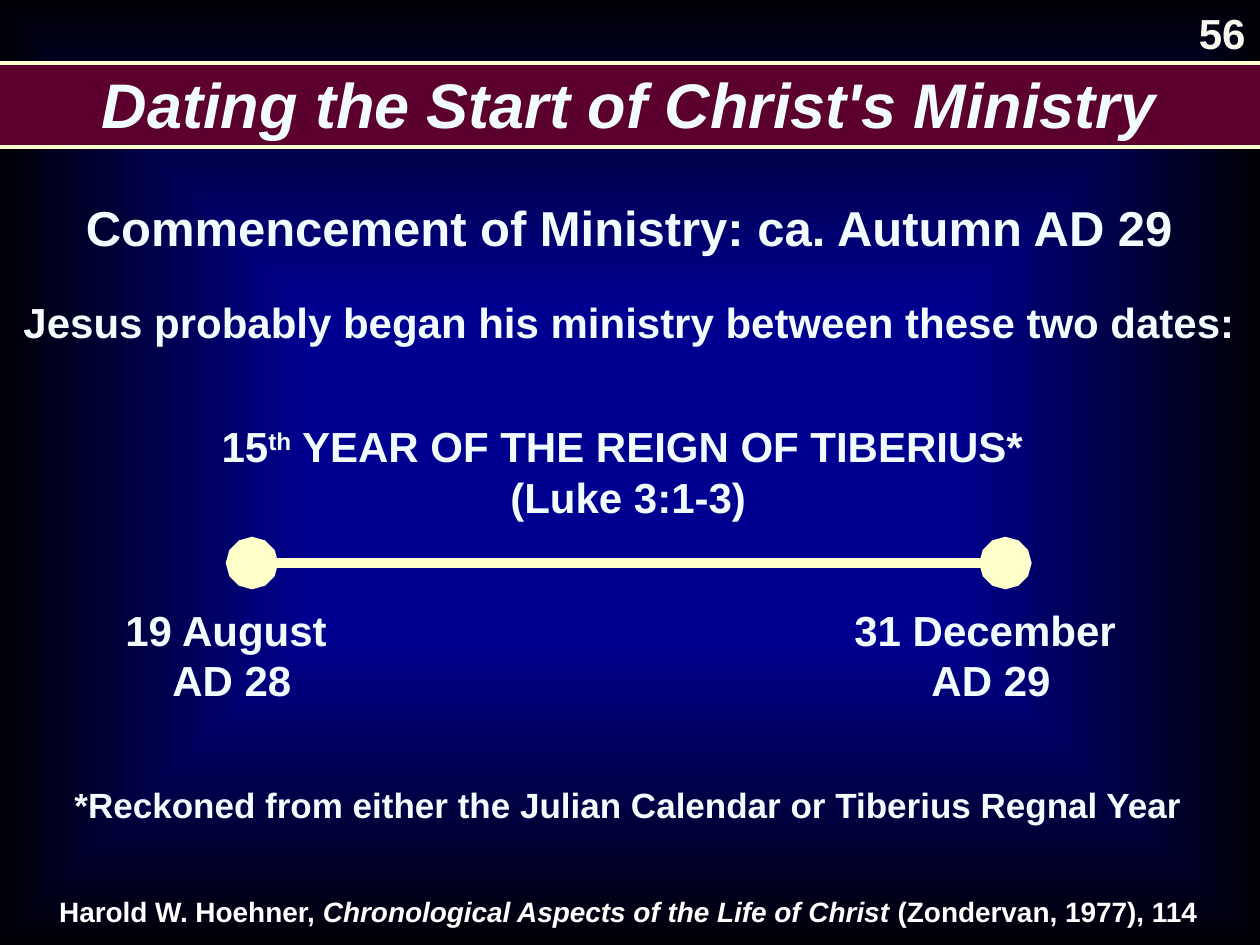
import pptx
import pptx.util
import pptx.dml.color
import pptx.enum.dml
import pptx.enum.shapes
import pptx.enum.text
import pptx.oxml
import pptx.oxml.ns

Pt = pptx.util.Pt
RGB = pptx.dml.color.RGBColor
ALIGN = pptx.enum.text.PP_ALIGN
ANCHOR = pptx.enum.text.MSO_ANCHOR
RECT = pptx.enum.shapes.MSO_SHAPE.RECTANGLE

NAVY = RGB(0x00, 0x00, 0x90)
BLACK = RGB(0x00, 0x00, 0x00)
CREAM = RGB(0xFF, 0xFF, 0xCC)
WINE = RGB(0x5C, 0x00, 0x2E)
ICE = RGB(0xF2, 0xFC, 0xFF)
IVORY = RGB(0xF8, 0xF8, 0xEF)
WHITE = RGB(0xFF, 0xFF, 0xFF)


def tag(name, **attrs):
    space = pptx.oxml.ns.nsdecls("a")
    pairs = " ".join(f'{key}="{val}"' for key, val in attrs.items())
    return pptx.oxml.parse_xml(f"<a:{name} {space} {pairs}/>")


def write(shape, lines, size, color=ICE, align=ALIGN.CENTER, anchor=ANCHOR.BOTTOM, wrap=True):
    frame = shape.text_frame
    frame.word_wrap = wrap
    frame.vertical_anchor = anchor
    para = frame.paragraphs[0]
    para.alignment = align
    for row, line in enumerate(lines):
        if row:
            para.add_line_break()
        for words, style in line:
            run = para.add_run()
            run.text = words
            font = run.font
            font.name = "Arial"
            font.size = Pt(size)
            font.bold = True
            font.italic = style == "italic"
            font.color.rgb = color
            if style == "super":
                font._element.set("baseline", "30000")


def label(slide, box, lines, size, **look):
    shape = slide.shapes.add_textbox(*map(Pt, box))
    write(shape, lines, size, **look)


def panel(slide, box, width):
    shape = slide.shapes.add_shape(RECT, *map(Pt, box))
    shape.shadow.inherit = False
    shape.line.color.rgb = CREAM
    shape.line.width = Pt(width)
    return shape


def backdrop(slide, box):
    fill = panel(slide, box, 1).fill
    fill.gradient()
    for stop, color, place in zip(fill.gradient_stops, (NAVY, BLACK), (0.34, 1)):
        stop.color.rgb = color
        stop.position = place
    grad = fill._xPr.find(pptx.oxml.ns.qn("a:gradFill"))
    old = grad.find(pptx.oxml.ns.qn("a:lin"))
    route = tag("path", path="rect")
    route.append(tag("fillToRect", l=50000, t=50000, r=50000, b=50000))
    grad.replace(old, route)


def header(slide, box):
    left, top, width, height = box
    label(slide, (left + 684.5, top - 35.5, 42, 36.5), [[("56", "")]], 24, color=IVORY,
          align=ALIGN.LEFT, anchor=ANCHOR.TOP, wrap=False)
    bar = panel(slide, box, 2.25)
    bar.fill.solid()
    bar.fill.fore_color.rgb = WINE
    write(bar, [[("Dating the Start of Christ's Ministry", "italic")]], 36)


def intro(slide, box):
    left, top, width, height = box
    rows = (("Commencement of Ministry: ca. Autumn AD 29", 28),
            ("Jesus probably began his ministry between these two dates:", 24))
    for row, (words, size) in enumerate(rows):
        label(slide, (left, top + row * 52, width, height), [[(words, "")]], size)


def span(slide, box):
    left, top, width, height = box
    title = [[("15", ""), ("th", "super"), (" YEAR OF THE REIGN OF TIBERIUS* ", "")],
             [("(Luke 3:1-3)", "")]]
    label(slide, (left - 47, top, width + 93.5, 65.5), title, 24)
    dates = ((-128, 233, "19 August ", "AD 28"), (281.5, 281.5, "31 December ", "AD 29"))
    for shift, wide, day, year in dates:
        label(slide, (left + shift, top + 112.5, wide, 58), [[(day, "")], [(year, "")]], 24)
    level = Pt(top + 85.75)
    rule = slide.shapes.add_connector(pptx.enum.shapes.MSO_CONNECTOR.STRAIGHT,
                                      Pt(left), level, Pt(left + width), level)
    rule.line.color.rgb = CREAM
    rule.line.width = Pt(6)
    edge = rule.line._get_or_add_ln()
    for end in ("headEnd", "tailEnd"):
        edge.append(tag(end, type="oval", w="lg", len="lg"))
    rule._element.spPr.append(tag("effectLst"))


def footer(slide, box):
    left, top, width, height = box
    note = "*Reckoned from either the Julian Calendar or Tiberius Regnal Year"
    label(slide, (left, top, width, 39), [[(note, "")]], 20, anchor=ANCHOR.MIDDLE)
    cite = [[("Harold W. Hoehner, ", ""),
             ("Chronological Aspects of the Life of Christ ", "italic"),
             ("(Zondervan, 1977), 114", "")]]
    label(slide, (left, top + height - 26.5, width, 26.5), cite, 16,
          color=WHITE, anchor=ANCHOR.TOP)


def main():
    deck = pptx.Presentation()
    deck.slide_width = Pt(720)
    deck.slide_height = Pt(540)
    slide = deck.slides.add_slide(deck.slide_layouts[6])
    backdrop(slide, (-6, -6, 732, 552))
    header(slide, (-6.5, 36, 732, 48))
    intro(slide, (-6.5, 102, 732, 48))
    span(slide, (144, 236, 430.5, 171))
    footer(slide, (-0.5, 440, 719, 94))
    deck.save("out.pptx")


if __name__ == "__main__":
    main()
